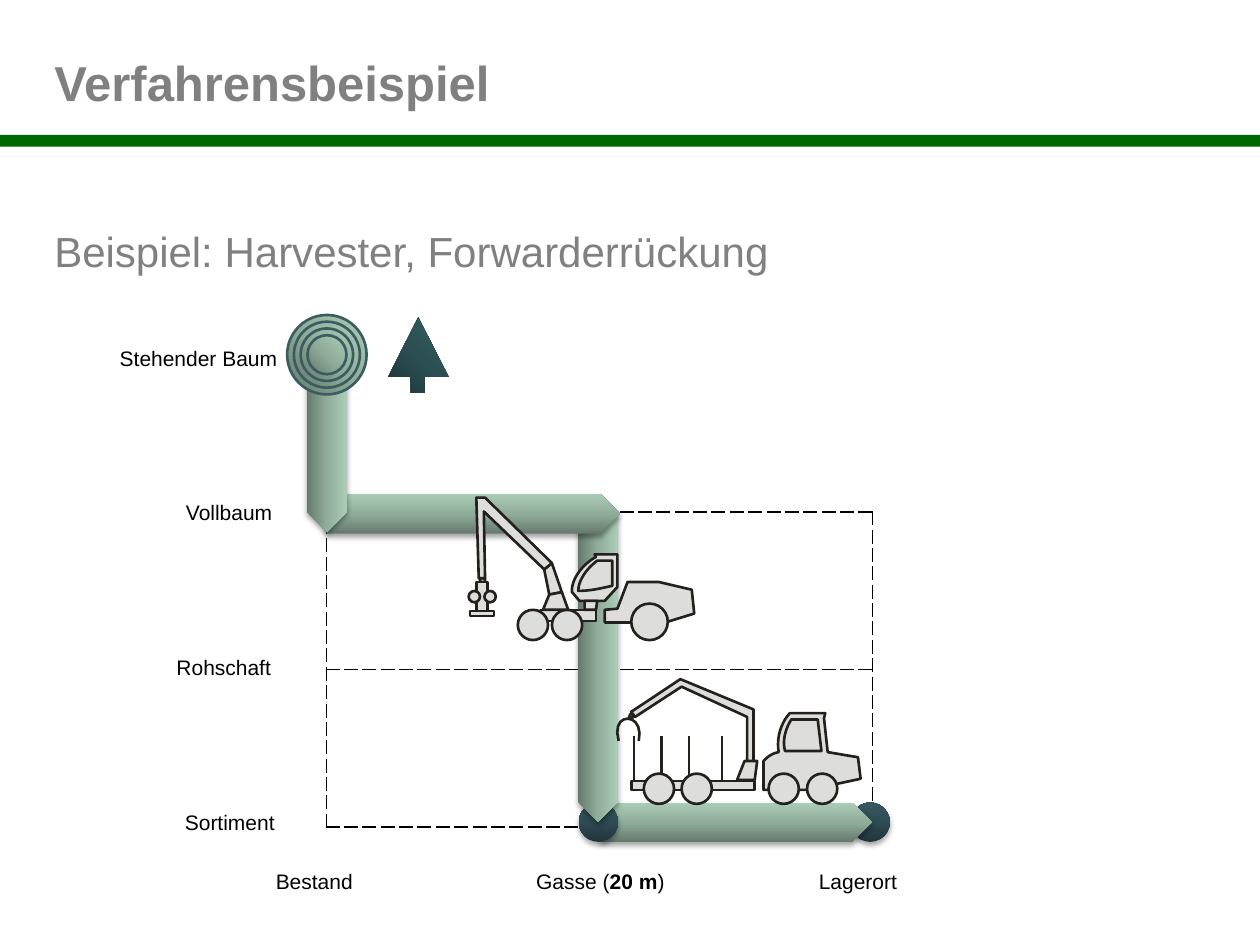
import copy
from dataclasses import dataclass
from typing import NamedTuple

import lxml.etree as etree
import pptx
import pptx.dml.color
import pptx.enum.shapes
import pptx.enum.text
import pptx.oxml.ns
import pptx.util

Pt = pptx.util.Pt
qn = pptx.oxml.ns.qn
KIND = pptx.enum.shapes.MSO_SHAPE
ALIGN = pptx.enum.text.PP_ALIGN


class Blend(NamedTuple):
    stops: tuple
    angle: int


@dataclass(frozen=True)
class Theme:
    font: str = "Arial"
    head: int = 28
    sub: int = 24
    label: int = 12
    gray: str = "808080"
    black: str = "000000"
    green: str = "006600"
    steel: str = "DDDDDC"
    ink: str = "24211D"
    ring: str = "395D61"
    sage: tuple = ("657A6D", "90AD9B", "ABCDB7")
    slate: tuple = ("21343B", "2E4B53", "375863")
    pine: tuple = ("1B3437", "2C4F53", "365F64")
    stroke: float = 1.5


T = Theme()


class Box(NamedTuple):
    kind: int
    x: float
    y: float
    w: float
    h: float
    turn: int = 0


class Outline(NamedTuple):
    """Points; an entry of six numbers is a cubic curve."""
    points: tuple
    filled: bool = True
    closed: bool = True


class Stake(NamedTuple):
    x: float
    top: float
    foot: float


class Label(NamedTuple):
    runs: tuple
    x: float
    y: float
    w: float
    align: int
    wrap: bool = True


def rgb(code: str):
    return pptx.dml.color.RGBColor.from_string(code)


def paint(shape, fill, line=None) -> None:
    shape.shadow.inherit = False
    if fill is None:
        shape.fill.background()
    elif isinstance(fill, Blend):
        shape.fill.gradient()
        shape.fill.gradient_angle = fill.angle
        first = shape._element.spPr.find(".//" + qn("a:gs"))
        first.addnext(copy.deepcopy(first))
        for i, (stop, code) in enumerate(zip(shape.fill.gradient_stops, fill.stops)):
            stop.color.rgb = rgb(code)
            stop.position = i / 2
    else:
        shape.fill.solid()
        shape.fill.fore_color.rgb = rgb(fill)
    if line:
        shape.line.color.rgb = rgb(line)
        shape.line.width = Pt(T.stroke)
    else:
        shape.line.fill.background()


def add_box(shapes, box: Box, fill, line=None):
    shape = shapes.add_shape(box.kind, Pt(box.x), Pt(box.y), Pt(box.w), Pt(box.h))
    shape.rotation = box.turn
    paint(shape, fill, line)
    return shape


def add_shade(shape) -> None:
    root = shape._element.spPr.find(qn("a:effectLst"))
    shade = etree.SubElement(root, qn("a:outerShdw"), blurRad=str(Pt(3.1)),
                             dist=str(Pt(1.8)), dir="5400000", rotWithShape="0")
    color = etree.SubElement(shade, qn("a:srgbClr"), val=T.black)
    etree.SubElement(color, qn("a:alpha"), val="35000")


def flatten(points: tuple, steps: int = 10) -> list:
    """Turn curves into short straight steps."""
    flat = [points[0]]
    for item in points[1:]:
        if len(item) == 2:
            flat.append(item)
            continue
        ends = (flat[-1], item[:2], item[2:4], item[4:])
        for i in range(1, steps + 1):
            t = i / steps
            parts = ((1 - t) ** 3, 3 * t * (1 - t) ** 2, 3 * t * t * (1 - t), t ** 3)
            flat.append(tuple(sum(k * p[axis] for k, p in zip(parts, ends))
                              for axis in (0, 1)))
    return flat


def add_outline(shapes, outline: Outline, fill, line=None) -> None:
    spots = [(Pt(x), Pt(y)) for x, y in flatten(outline.points)]
    pen = shapes.build_freeform(*spots[0], scale=1.0)
    pen.add_line_segments(spots[1:], close=outline.closed)
    paint(pen.convert_to_shape(), fill if outline.filled else None, line)


def add_stake(shapes, stake: Stake) -> None:
    line = shapes.add_connector(pptx.enum.shapes.MSO_CONNECTOR.STRAIGHT, Pt(stake.x),
                                Pt(stake.top), Pt(stake.x), Pt(stake.foot))
    line.line.color.rgb = rgb(T.ink)
    line.line.width = Pt(T.stroke)
    etree.SubElement(line._element.spPr, qn("a:effectLst"))


def add_machine(slide, parts: tuple) -> None:
    shapes = slide.shapes.add_group_shape().shapes
    for part in parts:
        if isinstance(part, Stake):
            add_stake(shapes, part)
        elif isinstance(part, Box):
            add_box(shapes, part, T.steel, T.ink)
        else:
            add_outline(shapes, part, T.steel, T.ink)


def style(run, size: int, color: str, bold: bool = False) -> None:
    run.font.name, run.font.size, run.font.bold = T.font, Pt(size), bold
    run.font.color.rgb = rgb(color)


def add_label(shapes, label: Label) -> None:
    frame = shapes.add_textbox(Pt(label.x), Pt(label.y), Pt(label.w), Pt(21.8)).text_frame
    frame.word_wrap = label.wrap
    frame.auto_size = pptx.enum.text.MSO_AUTO_SIZE.SHAPE_TO_FIT_TEXT
    frame.paragraphs[0].alignment = label.align
    for i, text in enumerate(label.runs):
        run = frame.paragraphs[0].add_run()
        run.text = text
        style(run, T.label, T.black, i == 1)


def set_head(shape, text: str, size: int, place: tuple, bold: bool) -> None:
    shape.left, shape.top, shape.width, shape.height = map(Pt, place)
    frame = shape.text_frame
    frame.text = text
    frame.word_wrap = True
    frame.auto_size = pptx.enum.text.MSO_AUTO_SIZE.NONE
    frame.vertical_anchor = pptx.enum.text.MSO_ANCHOR.MIDDLE
    frame.margin_left = 0
    frame.paragraphs[0].alignment = ALIGN.LEFT
    style(frame.paragraphs[0].runs[0], size, T.gray, bold)


def add_grid(shapes) -> None:
    table = shapes.add_table(3, 2, Pt(186.5), Pt(202.5), Pt(312), Pt(270)).table
    table.first_row = table.horz_banding = False
    for row in range(3):
        table.rows[row].height = Pt(90)
        for col in range(2):
            cell = table.cell(row, col)
            shown = "LRTB" if row else ("B" if col else "LB")
            root = cell._tc.get_or_add_tcPr()
            for side in "LRTB":
                line = etree.SubElement(root, qn("a:ln" + side), w=str(Pt(1)))
                if side in shown:
                    fill = etree.SubElement(line, qn("a:solidFill"))
                    etree.SubElement(fill, qn("a:srgbClr"), val=T.black)
                    etree.SubElement(line, qn("a:prstDash"), val="dash")
                else:
                    etree.SubElement(line, qn("a:noFill"))
            cell.fill.background()


def wheel(x: float, y: float, size: float = 17.3) -> Box:
    return Box(KIND.OVAL, x, y, size, size)


TREE = Outline(((242.6, 224.6), (242.6, 215.3), (256.3, 215.3), (239, 181.4),
                (221.8, 215.3), (234.7, 215.3), (234.7, 224.6)))
HARVESTER = (
    Outline(((276.5, 330.5), (276.5, 330.5, 277.2, 330.5, 277.2, 331.2), (277.2, 331.9),
             (277.2, 332.6, 276.5, 332.6, 276.5, 332.6), (275, 332.6, 274.3, 332.6, 274.3, 331.9),
             (274.3, 331.2), (274.3, 330.5, 275, 330.5, 276.5, 330.5)), filled=False),
    Outline(((340.6, 318.2), (339.8, 316.8), (352.8, 316.8), (352.8, 335.5), (345.6, 343.4),
             (331.2, 343.4), (326.9, 338.4), (326.2, 333.4, 330.5, 324, 340.6, 318.2))),
    Outline(((341.3, 320.4), (334.8, 325.4, 330.5, 331.9, 330.5, 337.7),
             (337.7, 337.7, 343.4, 336.2, 349.9, 334.8), (349.9, 320.4))),
    Box(KIND.RECTANGLE, 308.9, 348.5, 31.7, 6.5), Box(KIND.RECTANGLE, 272.2, 332.6, 6.5, 16.6),
    wheel(267.8, 337.7, 6.5), wheel(276.8, 337.7, 6.5),
    Box(KIND.RECTANGLE, 268.6, 349.2, 13.7, 2.9), wheel(295.9, 348.5), wheel(315.4, 348.5),
    Outline(((345.6, 348.5), (345.6, 355.7), (380.2, 355.7), (396.7, 350.6), (395.3, 337),
             (376.6, 332.6), (358.6, 332.6), (352.8, 347.8))),
    wheel(360.7, 344.9, 20.9),
    Outline(((311, 325.4), (313.9, 339.8), (321.1, 338.4), (315.4, 321.8))),
    Outline(((324.7, 348.5), (321.1, 338.4), (313.9, 339.8), (310.3, 348.5))),
    Outline(((334.1, 343.4), (341.3, 343.4), (340.6, 348.5), (334.1, 348.5))),
    Outline(((315.4, 321.8), (277.2, 284.4), (272.2, 284.4), (273.6, 330.5), (277.2, 330.5),
             (276.5, 292.3), (311, 325.4))))
FORWARDER = (
    *(Stake(x, 420.3, 445.7) for x in (378, 393.8)),
    Box(KIND.RECTANGLE, 360.7, 446.4, 70.6, 5), wheel(367.9, 442.1), wheel(389.5, 442.1),
    Outline(((462.2, 451.4), (491.8, 445), (490.3, 432.7), (473, 429.8), (470.9, 410.4),
             (471.6, 407.5), (451.4, 407.5), (446.4, 412.6, 443.5, 421.9, 445, 429.8),
             (440.6, 430.6, 438.5, 432.7, 436.3, 434.9), (436.3, 451.4))),
    *(Stake(x, 420.3, 445.7) for x in (362.2, 412.6)),
    Outline(((430.6, 439.2), (430.6, 405.4), (388.8, 388.1), (360.7, 406.8), (362.9, 409.7),
             (389.5, 392.4), (427, 409.7), (427, 439.2))),
    Outline(((425.5, 434.9), (421.2, 445.7), (431.3, 445.7), (432.7, 434.9))),
    wheel(439.2, 442.1), wheel(461.2, 442.1),
    Outline(((353.5, 423.4), (348.5, 406.1, 368.6, 406.8, 365, 423.4)), False, False),
    Outline(((467.3, 411.1), (469.4, 429.1), (448.6, 429.1),
             (447.1, 423.4, 448.6, 416.9, 452.2, 411.1))),
    Outline(((361.4, 408.2), (362.2, 409, 362.2, 409.7, 361.4, 409.7), (361.4, 410.4),
             (360.7, 411.1, 360, 411.1, 360, 410.4), (359.3, 410.4, 359.3, 409.7, 360, 409),
             (360, 408.2))))
ROUTE = (
    (wheel(486, 458.6, 22.5), T.slate), (Box(KIND.PENTAGON, 342.7, 458.6, 155.5, 22.6), T.sage),
    (wheel(330.7, 458.6, 22.5), T.slate),
    (Box(KIND.PENTAGON, 253.4, 370.1, 176.4, 22.6, 90), T.sage),
    (Box(KIND.PENTAGON, 186.5, 282.2, 167.8, 22.8), T.sage),
    (Box(KIND.PENTAGON, 137.5, 243.4, 98.6, 22.8, 90), T.sage))
STATES = (("Stehender Baum", 60.5, 105.1), ("Vollbaum", 98.6, 64.1),
          ("Rohschaft", 92.9, 69.1), ("Sortiment", 97.9, 66.2))
PLACES = (Label(("Bestand",), 150.5, 492.5, 71.3, ALIGN.LEFT),
          Label(("Gasse (", "20 m", ")"), 285.1, 492.5, 115.9, ALIGN.CENTER),
          Label(("Lagerort",), 460.8, 492.5, 71.3, ALIGN.LEFT))


def main() -> None:
    deck = pptx.Presentation()
    deck.slide_width, deck.slide_height = Pt(720), Pt(540)
    slide = deck.slides.add_slide(deck.slide_layouts[5])
    shapes = slide.shapes
    add_box(shapes, Box(KIND.RECTANGLE, 0, 77.1, 720, 6.7), T.green)
    add_grid(shapes)
    for box, stops in ROUTE:
        add_shade(add_box(shapes, box, Blend(stops, 90)))
    for i, (text, x, w) in enumerate(STATES):
        add_label(shapes, Label((text,), x, 193.7 + 88.4 * i, w, ALIGN.RIGHT, False))
    for place in PLACES:
        add_label(shapes, place)
    rings = shapes.add_group_shape().shapes
    for i in range(4):
        size = 45.4 - 7.7 * i
        add_box(rings, wheel(186.8 - size / 2, 202.7 - size / 2, size), Blend(T.sage, 45), T.ring)
    add_outline(shapes, TREE, Blend(T.pine, 45))
    add_machine(slide, HARVESTER)
    add_machine(slide, FORWARDER)
    set_head(shapes.add_textbox(0, 0, 0, 0), "Verfahrensbeispiel", T.head,
             (31, 31.7, 282.2, 30.2), True)
    set_head(shapes.title, "Beispiel: Harvester, Forwarderrückung", T.sub,
             (31, 128.2, 603.4, 30.2), False)
    deck.save("out.pptx")


if __name__ == "__main__":
    main()
